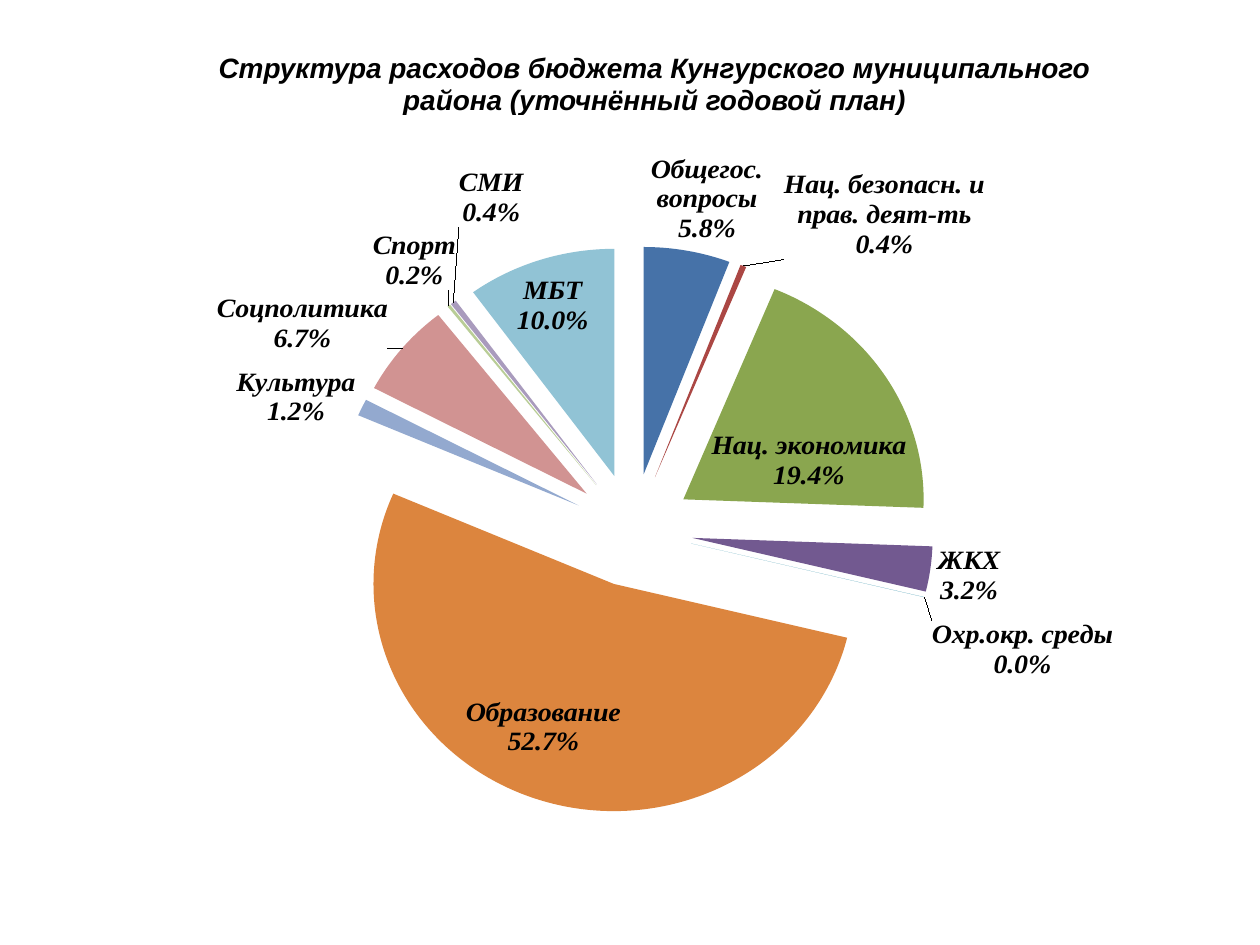
from copy import deepcopy
from lxml import etree
from pptx import Presentation
from pptx import util as u
from pptx.chart import data as cd
from pptx.dml.color import RGBColor
from pptx.enum import chart as ch, text
from pptx.oxml import ns

INK = "000000"
TITLE = "Структура расходов бюджета Кунгурского муниципального района (уточнённый годовой план)"
COLORS = {
    "Общегос. вопросы": "4672A8",
    "Нац. безопасн. и прав. деят-ть": "AB4744",
    "Нац. экономика": "8AA64F",
    "ЖКХ": "725990",
    "Охр.окр. среды": "4299B0",
    "Образование": "DC853E",
    "Культура": "93A9CF",
    "Соцполитика": "D19392",
    "Спорт": "B9CD96",
    "СМИ": "A99BBD",
    "МБТ": "91C3D5",
}
# The fifth share rounds to 0.0% but must stay above zero to keep its label
SHARES = [5.8, 0.4, 19.4, 3.2, 0.01, 52.7, 1.2, 6.7, 0.2, 0.4, 10]
# Label shifts in inches from the outer end of each slice
SHIFTS = [(-0.3, 0), (0.3, 0), (-1.43, 0.99), (0, -0.2),
          (0, 0.18), (0.68, -0.91), (0, 0.19), (-0.07, 0.08),
          (0.09, -0.08), (0.59, -0.58), (0.4, 0.69)]


def style(font, name):
    font.name, font.size = name, u.Pt(16)
    font.bold = font.italic = True
    font.color.rgb = RGBColor.from_string(INK)


def node(tag, **attrs):
    item = etree.Element(ns.qn("c:" + tag))
    for key, val in attrs.items():
        item.set(key, str(val))
    return item


def layout(**parts):
    """Return a manual chart layout with the given fractions."""
    outer, inner = node("layout"), node("manualLayout")
    outer.append(inner)
    for tag, val in parts.items():
        inner.append(node(tag, val=val))
    return outer


def add_title(slide, left, top, width, height):
    frame = slide.shapes.add_table(
        1, 1, u.Inches(left), u.Inches(top), u.Inches(width), u.Inches(height))
    table = frame.table
    table.first_row = table.horz_banding = False
    cell = table.cell(0, 0)
    cell.fill.background()
    cell.margin_left = cell.margin_right = cell.margin_top = cell.margin_bottom = 0
    cell.vertical_anchor = text.MSO_ANCHOR.BOTTOM
    cell.text = TITLE
    para = cell.text_frame.paragraphs[0]
    para.alignment = text.PP_ALIGN.CENTER
    style(para.font, "Arial")


def add_labels(series, width, height):
    labels = series.data_labels
    labels.show_value = False
    labels.show_category_name = labels.show_percentage = True
    labels.number_format = "0.0%"
    labels.number_format_is_linked = False
    labels.position = ch.XL_LABEL_POSITION.OUTSIDE_END
    style(labels.font, "Times New Roman")
    root = series._element.find(ns.qn("c:dLbls"))
    root.find(ns.qn("c:txPr")).find(ns.qn("a:bodyPr")).set("wrap", "square")
    gap = node("separator")
    gap.text = "\n"
    root.find(ns.qn("c:showBubbleSize")).addnext(gap)
    shared = [part for part in root if part.tag != ns.qn("c:showLeaderLines")]
    for num, (dx, dy) in enumerate(SHIFTS):
        label = node("dLbl")
        label.append(node("idx", val=num))
        label.append(layout(x=round(dx / width, 4), y=round(dy / height, 4)))
        label.extend(deepcopy(shared))
        root.insert(num, label)


def add_pie(slide, left, top, width, height):
    data = cd.CategoryChartData()
    data.categories = list(COLORS)
    data.add_series("Расходы", SHARES)
    chart = slide.shapes.add_chart(
        ch.XL_CHART_TYPE.PIE, u.Inches(left), u.Inches(top),
        u.Inches(width), u.Inches(height), data).chart
    chart.has_title = chart.has_legend = False
    chart.font.name, chart.font.size = "Calibri", u.Pt(10)

    area = chart._chartSpace.chart.plotArea
    for old in area.findall(ns.qn("c:layout")):
        area.remove(old)
    area.insert(0, layout(layoutTarget="inner", xMode="edge", yMode="edge",
                          x=0.085, y=0.161, w=0.839, h=0.822))

    plot = chart.plots[0]
    plot.vary_by_categories = True
    series = plot.series[0]
    series._element.find(ns.qn("c:tx")).addnext(node("explosion", val=25))
    for num, color in enumerate(COLORS.values()):
        form = series.points[num].format
        form.fill.solid()
        form.fill.fore_color.rgb = RGBColor.from_string(color)
        form.line.fill.background()
    add_labels(series, width, height)


def main():
    deck = Presentation()
    deck.slide_width, deck.slide_height = u.Inches(10), u.Inches(7.5)
    slide = deck.slides.add_slide(deck.slide_layouts[6])
    add_title(slide, 1.72, 0.39, 6.95, 0.53)
    add_pie(slide, 0.75, 1.07, 8.47, 5.8)
    deck.save("out.pptx")


if __name__ == "__main__":
    main()
